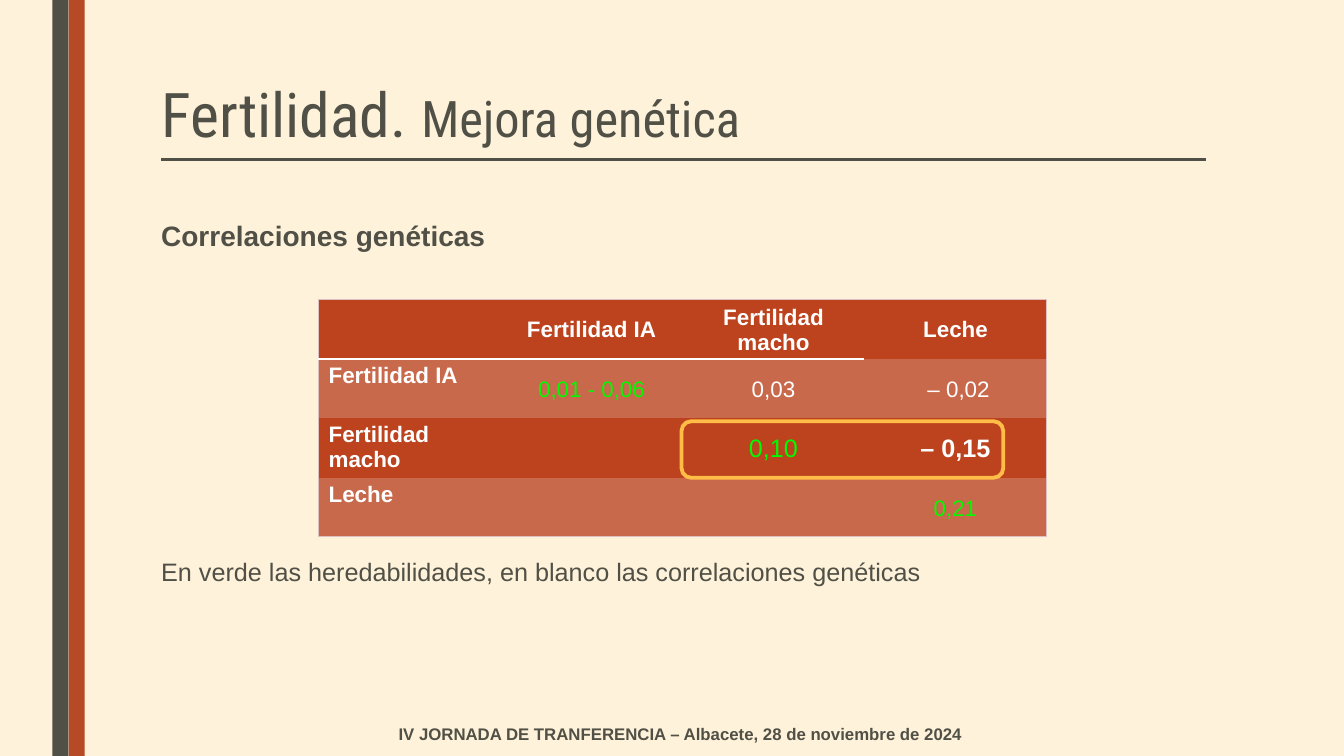
from lxml import etree
from pptx import Presentation
from pptx.dml.color import RGBColor
from pptx.enum.shapes import MSO_CONNECTOR, MSO_SHAPE
from pptx.enum.text import MSO_ANCHOR, PP_ALIGN
from pptx.oxml.ns import qn
from pptx.util import Inches, Pt

RECTANGLE, ROUNDED = MSO_SHAPE.RECTANGLE, MSO_SHAPE.ROUNDED_RECTANGLE
STRAIGHT = MSO_CONNECTOR.STRAIGHT
TOP, MIDDLE, BOTTOM = MSO_ANCHOR.TOP, MSO_ANCHOR.MIDDLE, MSO_ANCHOR.BOTTOM
LEFT, CENTER = PP_ALIGN.LEFT, PP_ALIGN.CENTER

COLORS = {
    "background": "FFF2DA", "dark": "505046", "stripe": "B64926",
    "row": "BC431E", "light_row": "C9694B", "frame": "DEC1BE",
    "white": "FFFFFF", "green": "00FA00", "highlight": "FFBD47",
}


def color(name):
    return RGBColor.from_string(COLORS[name])


def write(paragraph, text, size=16, ink="dark", bold=False, font="Arial", align=LEFT):
    paragraph.alignment = align
    run = paragraph.add_run()
    run.text = text
    run.font.name, run.font.size, run.font.bold = font, Pt(size), bold
    run.font.color.rgb = color(ink)


def set_borders(cell, borders):
    """Draw the given sides, {side: (colour, points)}, and clear the others."""
    properties = cell._tc.get_or_add_tcPr()
    for side in "LRTB":
        line = etree.SubElement(properties, qn(f"a:ln{side}"))
        if side in borders:
            name, points = borders[side]
            line.set("w", str(Pt(points)))
            fill = etree.SubElement(line, qn("a:solidFill"))
            etree.SubElement(fill, qn("a:srgbClr")).set("val", COLORS[name])
        else:
            etree.SubElement(line, qn("a:noFill"))


class SlideBuilder:
    def __init__(self, slide):
        self.slide = slide
        slide.background.fill.solid()
        slide.background.fill.fore_color.rgb = color("background")

    def title(self, box, parts):
        title = self.slide.shapes.title
        title.left, title.top, title.width, title.height = map(Inches, box)
        frame = title.text_frame
        frame.word_wrap, frame.vertical_anchor = True, BOTTOM
        paragraph = frame.paragraphs[0]
        paragraph.line_spacing = 0.89
        for text, size in parts:
            write(paragraph, text, size=size, font="Roboto Condensed")

    def text(self, box, text, **style):
        frame = self.slide.shapes.add_textbox(*map(Inches, box)).text_frame
        frame.word_wrap, frame.vertical_anchor = True, MIDDLE
        write(frame.paragraphs[0], text, **style)

    def stripe(self, box, fill):
        stripe = self.slide.shapes.add_shape(RECTANGLE, *map(Inches, box))
        stripe.shadow.inherit = False
        stripe.fill.solid()
        stripe.fill.fore_color.rgb = color(fill)
        stripe.line.fill.background()

    def outline(self, box, ink, points):
        outline = self.slide.shapes.add_shape(ROUNDED, *map(Inches, box))
        outline.shadow.inherit = False
        outline.fill.background()
        outline.line.color.rgb = color(ink)
        outline.line.width = Pt(points)

    def rule(self, ends, ink, points):
        rule = self.slide.shapes.add_connector(STRAIGHT, *map(Inches, ends))
        rule.line.color.rgb = color(ink)
        rule.line.width = Pt(points)
        etree.SubElement(rule._element.spPr, qn("a:effectLst"))

    def table(self, box, rows, styles):
        """Fill a table of equal cells; styles maps (row, column) to a text format."""
        last_row, last_column = len(rows) - 1, len(rows[0]) - 1
        table = self.slide.shapes.add_table(
            len(rows), len(rows[0]), *map(Inches, box)).table
        for r, values in enumerate(rows):
            for c, value in enumerate(values):
                cell = table.cell(r, c)
                edges = {"L": c == 0, "R": c == last_column,
                         "T": r == 0, "B": r == last_row}
                borders = {side: ("frame", 0.5) for side, on in edges.items() if on}
                if c < last_column and r < 2:
                    borders["B" if r == 0 else "T"] = ("white", 1.5)
                set_borders(cell, borders)
                cell.fill.solid()
                cell.fill.fore_color.rgb = color("light_row" if r % 2 else "row")
                cell.margin_top, cell.margin_bottom = Inches(0.04), Inches(0.02)
                is_label = c == 0
                cell.vertical_anchor = TOP if is_label else MIDDLE
                if value:
                    style = {"ink": "white", "bold": r == 0 or is_label,
                             "align": LEFT if is_label else CENTER}
                    write(cell.text_frame.paragraphs[0], value,
                          **{**style, **styles.get((r, c), {})})


def main():
    deck = Presentation()
    deck.slide_width, deck.slide_height = Inches(13.33), Inches(7.5)
    builder = SlideBuilder(deck.slides.add_slide(deck.slide_layouts[5]))

    builder.stripe((0.68, 0, 0.16, 7.5), "stripe")
    builder.stripe((0.52, 0, 0.16, 7.5), "dark")
    builder.rule((1.6, 1.58, 11.96, 1.58), "dark", 2.25)
    builder.title((1.5, 0.75, 10.5, 0.79),
                  [("Fertilidad. ", 44), ("Mejora genética", 36)])
    builder.text((1.5, 2.12, 10.5, 0.42), "Correlaciones genéticas",
                 size=20, bold=True)
    builder.text((1.5, 5.46, 10.5, 0.42),
                 "En verde las heredabilidades, en blanco las correlaciones genéticas",
                 size=18)
    builder.text((2.53, 7.06, 8.44, 0.44),
                 "IV JORNADA DE TRANFERENCIA – Albacete, 28 de noviembre de 2024",
                 size=12, bold=True, align=CENTER)

    correlations = [
        ["", "Fertilidad IA", "Fertilidad macho", "Leche"],
        ["Fertilidad IA", "0,01 - 0,06", "0,03", " – 0,02"],
        ["Fertilidad macho", "", "0,10", "– 0,15"],
        ["Leche", "", "", "0,21"],
    ]
    heritability = {"ink": "green"}
    builder.table((3.16, 2.97, 7.22, 2.34), correlations, {
        (1, 1): heritability,
        (2, 2): {**heritability, "size": 18},
        (2, 3): {"size": 18, "bold": True},
        (3, 3): heritability,
    })
    builder.outline((6.76, 4.18, 3.19, 0.56), "highlight", 2.75)

    deck.save("out.pptx")


if __name__ == "__main__":
    main()
